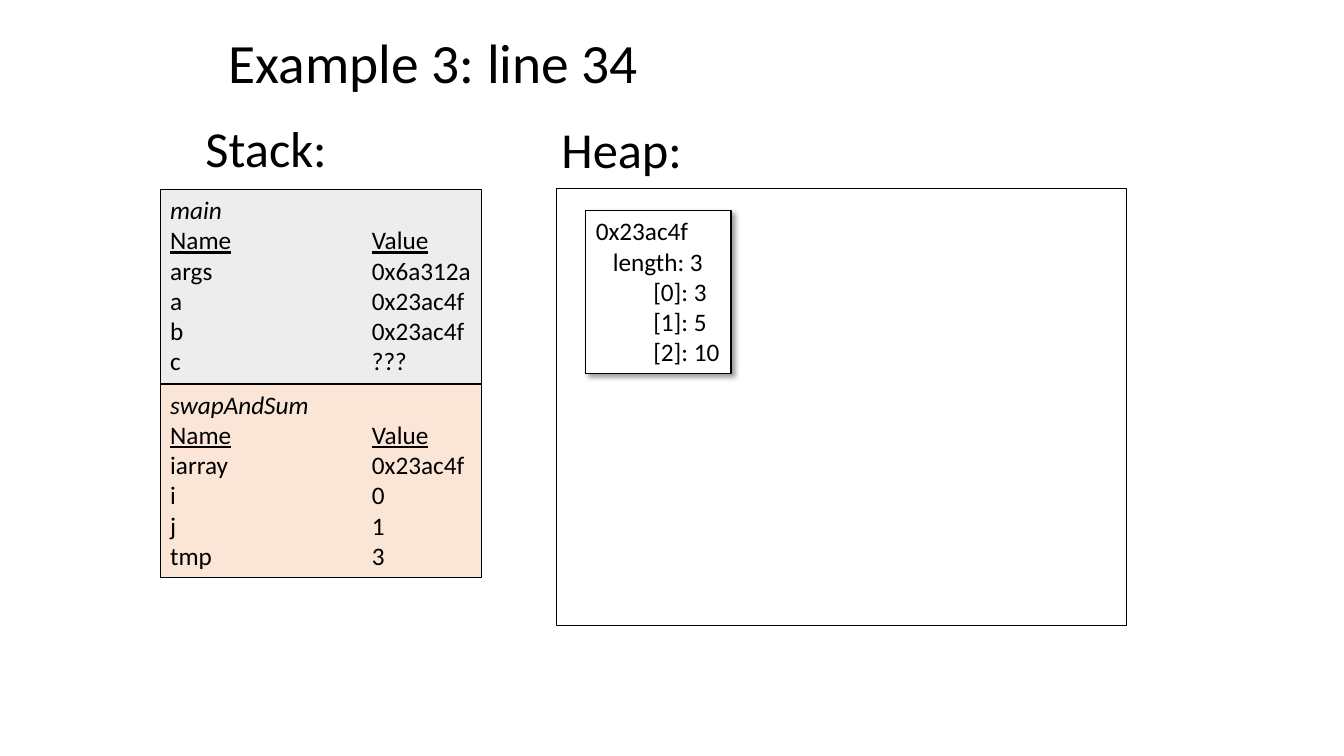
"""Build the memory diagram slide for Example 3."""
from dataclasses import dataclass

from lxml.etree import SubElement
from pptx import Presentation
from pptx.dml.color import RGBColor
from pptx.enum.shapes import MSO_SHAPE
from pptx.enum.text import MSO_ANCHOR, PP_ALIGN
from pptx.oxml import parse_xml
from pptx.oxml.ns import nsdecls, qn
from pptx.util import Inches, Pt


@dataclass(frozen=True)
class Theme:
    """Colours, typeface and type sizes of the slide."""
    ink: str = "000000"
    paper: str = "FFFFFF"
    main_frame: str = "EDEDED"
    call_frame: str = "FBE5D6"
    typeface: str = "Calibri"
    title: float = 39.6
    heading: float = 36
    body: float = 18
    outline: float = 0.75


THEME = Theme()
WIDTH, HEIGHT = Inches(13.33), Inches(7.5)
VALUE_TAB = Inches(2)
FRAME_LEFT, FRAME_TOP, FRAME_WIDTH = 11.93, 25.07, 23.93
FRAME_HEIGHT, FRAME_PITCH = 25.6, 25.73
FRAMES = [
    ("main", THEME.main_frame,
     [("args", "0x6a312a"), ("a", "0x23ac4f"), ("b", "0x23ac4f"), ("c", "???")]),
    ("swapAndSum", THEME.call_frame,
     [("iarray", "0x23ac4f"), ("i", "0"), ("j", "1"), ("tmp", "3")]),
]
HEAP_OBJECT = [("0x23ac4f", 0), ("length: 3", 0.17), ("[0]: 3", 0.57),
               ("[1]: 5", 0.57), ("[2]: 10", 0.57)]


def area(left, top, width, height):
    """Turn percentages of the slide's size into lengths."""
    return (int(WIDTH * left / 100), int(HEIGHT * top / 100),
            int(WIDTH * width / 100), int(HEIGHT * height / 100))


def apply(target, formats):
    """Set each named attribute of the target."""
    for name, value in formats.items():
        setattr(target, name, value)


def add_span(para, text, size, **formats):
    """Add a formatted run to a paragraph."""
    span = para.add_run()
    span.text = text
    span.font.color.rgb = RGBColor.from_string(THEME.ink)
    apply(span.font, {"name": THEME.typeface, "size": Pt(size), **formats})


def add_para(frame, first):
    """Return a left-aligned paragraph, reusing the first one."""
    para = frame.paragraphs[0] if first else frame.add_paragraph()
    para.alignment = PP_ALIGN.LEFT
    return para


def add_title(page, text):
    """Place and format the title placeholder."""
    box = page.shapes.title
    apply(box, dict(zip(("left", "top", "width", "height"),
                        area(16.28, 4, 67.5, 9.33))))
    apply(box.text_frame, {"vertical_anchor": MSO_ANCHOR.MIDDLE, "word_wrap": True})
    para = add_para(box.text_frame, True)
    para.line_spacing = 0.9
    add_span(para, text, THEME.title)


def add_heading(page, text, left, top):
    """Add the heading above a memory region."""
    box = page.shapes.add_textbox(*area(left, top, 10.5, 9.47))
    box.text_frame.word_wrap = True
    add_span(add_para(box.text_frame, True), text, THEME.heading)


def add_box(page, place, fill=None):
    """Add an outlined rectangle, filled when a colour is given."""
    box = page.shapes.add_shape(MSO_SHAPE.RECTANGLE, *area(*place))
    box.shadow.inherit = False
    if fill:
        box.fill.solid()
        box.fill.fore_color.rgb = RGBColor.from_string(fill)
    else:
        box.fill.background()
    box.line.color.rgb = RGBColor.from_string(THEME.ink)
    box.line.width = Pt(THEME.outline)
    apply(box.text_frame, {"vertical_anchor": MSO_ANCHOR.TOP, "word_wrap": True})
    return box


def add_row(frame, name, value, underline=False):
    """Add a name and its value, aligned at a tab stop."""
    para = add_para(frame, False)
    stops = SubElement(para._p.get_or_add_pPr(), qn("a:tabLst"))
    SubElement(stops, qn("a:tab"), pos=str(VALUE_TAB), algn="l")
    for text, line in ((name, underline), ("\t", False), (value, underline)):
        add_span(para, text, THEME.body, underline=line)


def add_stack_frame(page, index, method, fill, variables):
    """Add a stack frame with its table of variables."""
    top = FRAME_TOP + index * FRAME_PITCH
    box = add_box(page, (FRAME_LEFT, top, FRAME_WIDTH, FRAME_HEIGHT), fill)
    add_span(add_para(box.text_frame, True), method, THEME.body, italic=True)
    add_row(box.text_frame, "Name", "Value", underline=True)
    for name, value in variables:
        add_row(box.text_frame, name, value)


def add_shadow(box):
    """Give a box a soft shadow towards the lower right."""
    effects = box._element.spPr.find(qn("a:effectLst"))
    effects.append(parse_xml(
        f'<a:outerShdw {nsdecls("a")} blurRad="{Pt(4)}" dist="{Pt(3)}" '
        f'dir="{45 * 60000}" algn="tl" rotWithShape="0">'
        f'<a:srgbClr val="{THEME.ink}"><a:alpha val="40000"/></a:srgbClr>'
        '</a:outerShdw>'))


def add_heap_object(page, lines):
    """Add the array stored on the heap, with indented fields."""
    box = add_box(page, (43.59, 27.87, 10.8, 21.6), THEME.paper)
    add_shadow(box)
    for index, (text, indent) in enumerate(lines):
        para = add_para(box.text_frame, index == 0)
        para._p.get_or_add_pPr().set("marL", str(Inches(indent)))
        add_span(para, text, THEME.body)


def main():
    """Build and save the deck."""
    deck = Presentation()
    apply(deck, {"slide_width": WIDTH, "slide_height": HEIGHT})
    page = deck.slides.add_slide(deck.slide_layouts[5])
    add_title(page, "Example 3: line 34")
    add_heading(page, "Stack:", 14.55, 14.8)
    add_heading(page, "Heap:", 41.03, 14.93)
    add_box(page, (41.41, 24.93, 42.39, 57.87))
    add_heap_object(page, HEAP_OBJECT)
    for index, (method, fill, variables) in enumerate(FRAMES):
        add_stack_frame(page, index, method, fill, variables)
    deck.save("out.pptx")


if __name__ == "__main__":
    main()
